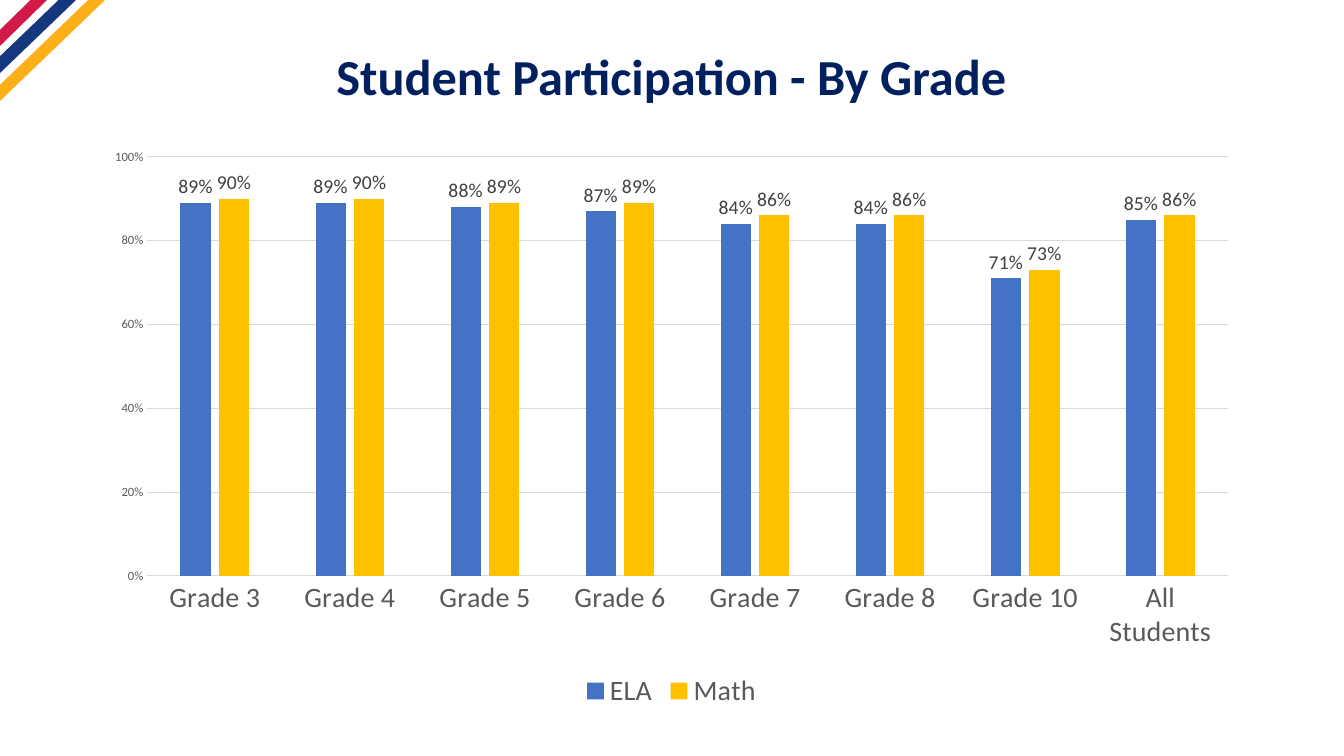
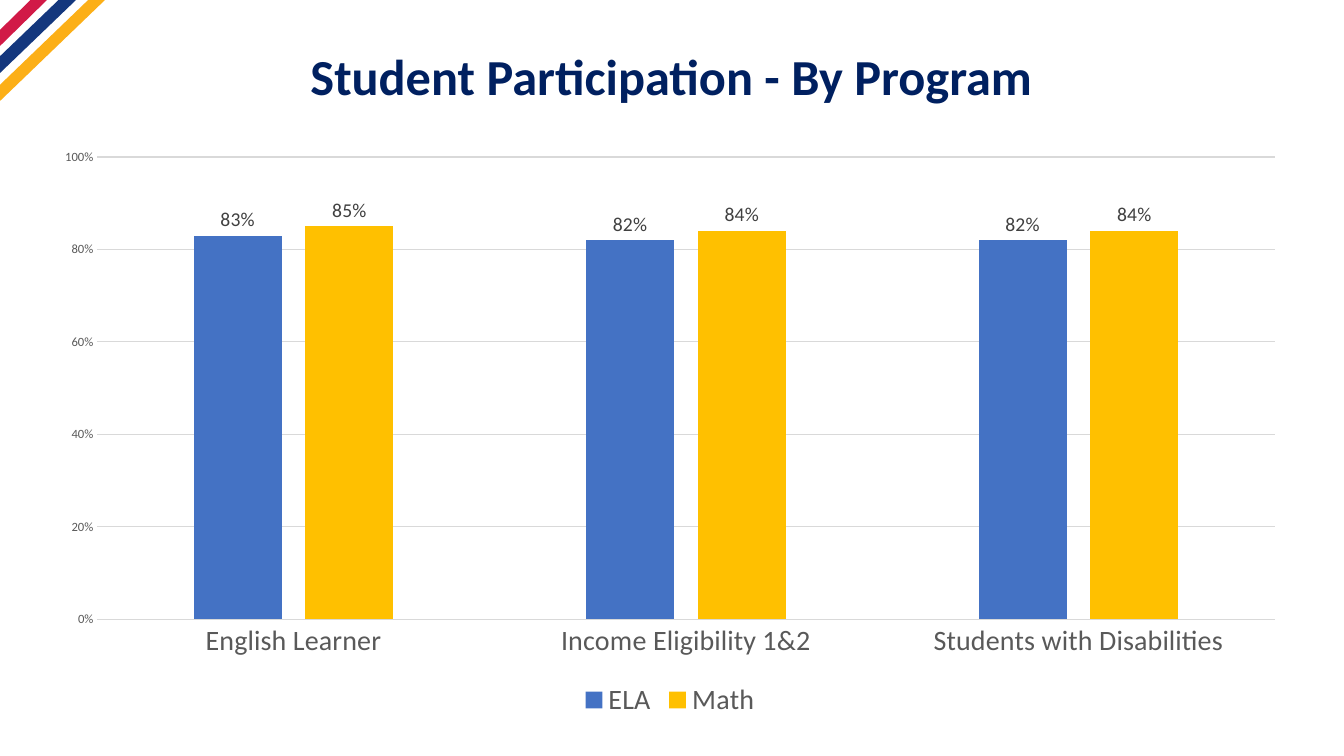
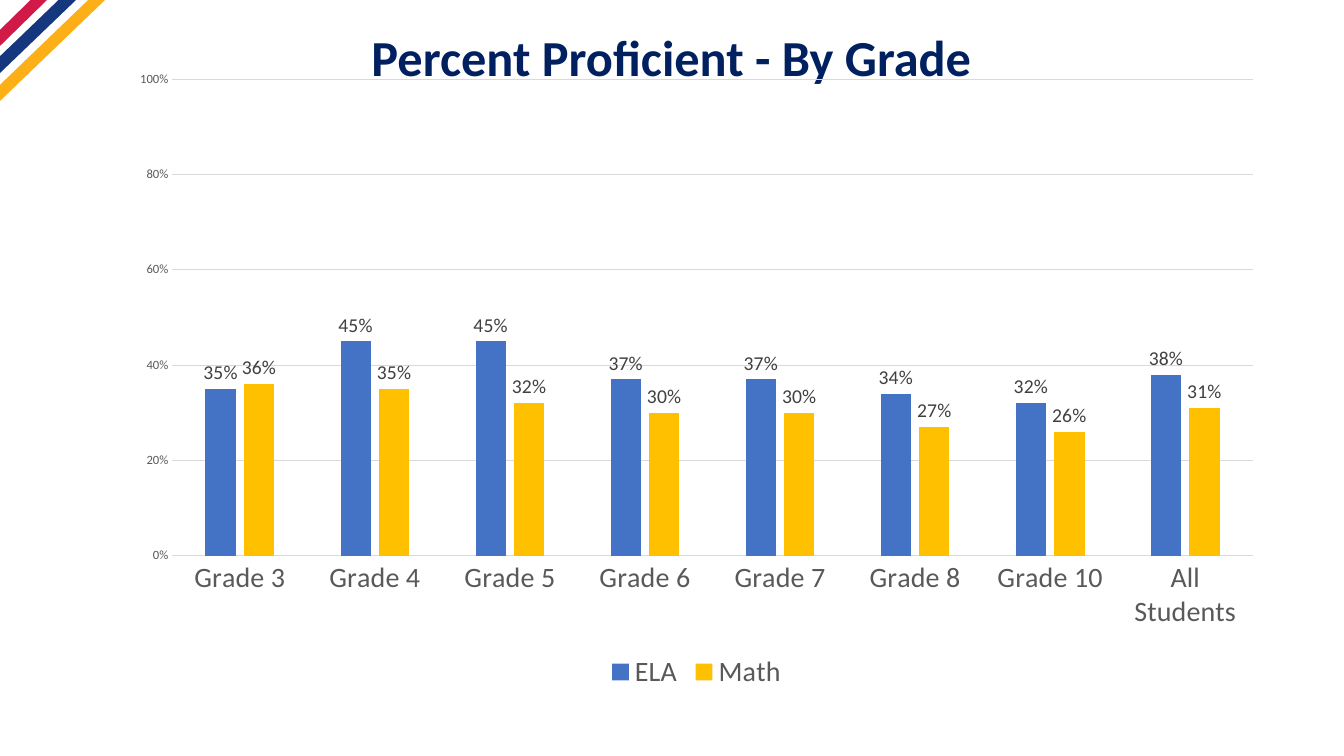
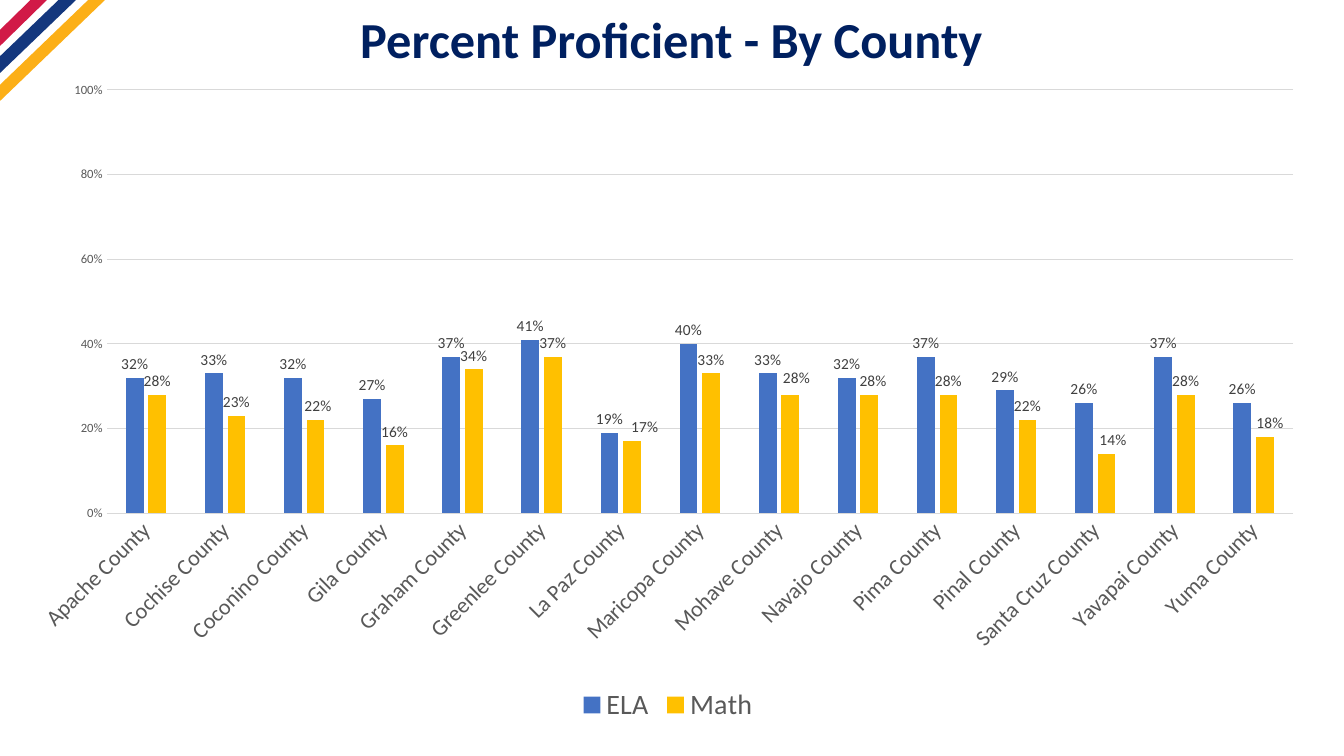
from pptx import Presentation
from pptx import util as u
from pptx.chart.data import CategoryChartData
from pptx.dml.color import RGBColor
from pptx.enum import chart as ce
from pptx.enum import shapes, text
from pptx.oxml import parse_xml
from pptx.oxml.ns import nsdecls

WIDE, HIGH = 1344, 756
FONT = "Calibri"
NAVY, GREY, DARK, RULE = "002060", "595959", "404040", "D9D9D9"
COLOURS = {"ELA": "4472C4", "Math": "FFC000"}
# width, height, adjustment, colour
STRIPES = [
    (47, 46, 0.65, "D11A47"),
    (76, 73, 0.77, "14377D"),
    (105, 101, 0.84, "FCAF17"),
]
GRADES = [f"Grade {n}" for n in (3, 4, 5, 6, 7, 8, 10)] + ["All Students"]
PROGRAMS = ["English Learner", "Income Eligibility 1&2",
            "Students with Disabilities"]
COUNTIES = [f"{name} County" for name in (
    "Apache", "Cochise", "Coconino", "Gila", "Graham", "Greenlee", "La Paz",
    "Maricopa", "Mohave", "Navajo", "Pima", "Pinal", "Santa Cruz", "Yavapai",
    "Yuma")]


def px(n):
    return u.Emu(round(n * 12192000 / WIDE))


def box(*sides):
    return [px(n) for n in sides]


def rgb(code):
    return RGBColor.from_string(code)


def style(font, size, colour, bold=False):
    font.name, font.size, font.bold = FONT, u.Pt(size), bold
    font.color.rgb = rgb(colour)


def rule(line):
    line.color.rgb = rgb(RULE)
    line.width = u.Pt(0.75)


def dress(layout, slide):
    """Draw the corner stripes and move them to the layout."""
    for holder in list(layout.placeholders)[1:]:
        holder.element.getparent().remove(holder.element)
    for i, (wide, high, bend, colour) in enumerate(STRIPES):
        stripe = slide.shapes.add_shape(
            shapes.MSO_SHAPE.DIAGONAL_STRIPE, *box(0, 0, wide, high))
        stripe.adjustments[0] = bend
        stripe.fill.solid()
        stripe.fill.fore_color.rgb = rgb(colour)
        stripe.line.fill.background()
        stripe.shadow.inherit = False
        layout.shapes.element.insert(2 + i, stripe.element)


def head(slide, words, top, high):
    title = slide.shapes.title
    title.left, title.top, title.width, title.height = box(92, top, 1159, high)
    frame = title.text_frame
    frame.text = words
    frame.vertical_anchor = text.MSO_ANCHOR.MIDDLE
    para = frame.paragraphs[0]
    para.alignment = text.PP_ALIGN.CENTER
    para.line_spacing = 0.9
    style(para.font, 36, NAVY, True)


def clear():
    return parse_xml(f'<c:spPr {nsdecls("c", "a")}><a:noFill/>'
                     '<a:ln><a:noFill/></a:ln></c:spPr>')


def manual(**parts):
    """Return a manual chart layout made of the given settings."""
    inner = "".join(f'<c:{k} val="{v}"/>' for k, v in parts.items())
    return parse_xml(f'<c:layout {nsdecls("c")}><c:manualLayout>{inner}'
                     '</c:manualLayout></c:layout>')


def axes(chart, size, turn):
    cats, vals = chart.category_axis, chart.value_axis
    for axis in (cats, vals):
        axis.major_tick_mark = axis.minor_tick_mark = ce.XL_TICK_MARK.NONE
    style(cats.tick_labels.font, size, GREY)
    rule(cats.format.line)
    body = chart.element.xpath(".//c:catAx/c:txPr/a:bodyPr")[0]
    body.set("rot", str(turn * 60000))
    style(vals.tick_labels.font, 9, GREY)
    vals.tick_labels.number_format = "0%"
    vals.tick_labels.number_format_is_linked = False
    vals.minimum_scale, vals.maximum_scale, vals.major_unit = 0, 1, 0.2
    vals.format.line.fill.background()
    rule(vals.major_gridlines.format.line)


def label(series, size):
    marks = series.data_labels
    marks.show_value = True
    marks.position = ce.XL_LABEL_POSITION.OUTSIDE_END
    marks.number_format = "0%"
    marks.number_format_is_linked = False
    style(marks.font, size, DARK)


def bars(slide, place, cats, ela, math, size=20, mark=14, turn=0):
    data = CategoryChartData(number_format="0%")
    data.categories = cats
    for name, vals in zip(COLOURS, (ela, math)):
        data.add_series(name, [v / 100 for v in vals])
    chart = slide.shapes.add_chart(
        ce.XL_CHART_TYPE.COLUMN_CLUSTERED, *box(*place), data).chart
    style(chart.font, 10, "000000")
    chart.has_title = False
    chart.has_legend = True
    chart.legend.position = ce.XL_LEGEND_POSITION.BOTTOM
    chart.legend.include_in_layout = False
    style(chart.legend.font, 20, GREY)
    axes(chart, size, turn)
    plot = chart.plots[0]
    plot.gap_width, plot.overlap, plot.vary_by_categories = 219, -27, False
    for series in plot.series:
        series.format.fill.solid()
        series.format.fill.fore_color.rgb = rgb(COLOURS[series.name])
        label(series, mark)
    chart.element.xpath("c:chart")[0].addnext(clear())
    chart.element.xpath("c:chart/c:plotArea")[0].append(clear())
    return chart


def nudge(chart, shifts, size):
    """Move single Math labels by (right, down) shares of the chart."""
    math = chart.plots[0].series[1]
    for i, (right, down) in shifts.items():
        mark = math.points[i].data_label
        mark.position = ce.XL_LABEL_POSITION.OUTSIDE_END
        style(mark.font, size, DARK)
        idx = chart.element.xpath(f".//c:dLbl/c:idx[@val='{i}']")[0]
        idx.addnext(manual(x=right, y=down))


def frame(chart, x, y, w, h):
    """Fix the inner plot area, in shares of the chart."""
    area = chart.element.xpath("c:chart/c:plotArea")[0]
    for old in area.xpath("c:layout"):
        area.remove(old)
    area.insert(0, manual(layoutTarget="inner", xMode="edge", yMode="edge",
                          x=x, y=y, w=w, h=h))


def main():
    deck = Presentation()
    deck.slide_width, deck.slide_height = px(WIDE), px(HIGH)
    layout = deck.slide_layouts[5]
    first = deck.slides.add_slide(layout)
    dress(layout, first)
    second, third, fourth = [deck.slides.add_slide(layout) for _ in range(3)]

    head(first, "Student Participation - By Grade", 19, 120)
    bars(first, (92, 138, 1159, 576), GRADES,
         [89, 89, 88, 87, 84, 84, 71, 85], [90, 90, 89, 89, 86, 86, 73, 86])

    head(second, "Student Participation - By Program", 19, 120)
    bars(second, (40, 138, 1260, 585), PROGRAMS, [83, 82, 82], [85, 84, 84])

    head(third, "Percent Proficient - By Grade", 19, 82)
    bars(third, (117, 59, 1159, 636), GRADES,
         [35, 45, 45, 37, 37, 34, 32, 38], [36, 35, 32, 30, 30, 27, 26, 31])

    head(fourth, "Percent Proficient - By County", 8, 69)
    chart = bars(
        fourth, (30, 77, 1276, 651), COUNTIES,
        [32, 33, 32, 27, 37, 41, 19, 40, 33, 32, 37, 29, 26, 37, 26],
        [28, 23, 22, 16, 34, 37, 17, 33, 28, 28, 28, 22, 14, 28, 18],
        size=16, mark=11, turn=-45)
    frame(chart, 0.06, 0.02, 0.93, 0.65)
    nudge(chart, {2: (0.002, 0), 6: (0.01, 0), 8: (0.005, -0.005),
                  9: (0.003, 0), 12: (0.005, 0), 14: (0.004, 0)}, 11)

    deck.save("out.pptx")


if __name__ == "__main__":
    main()
